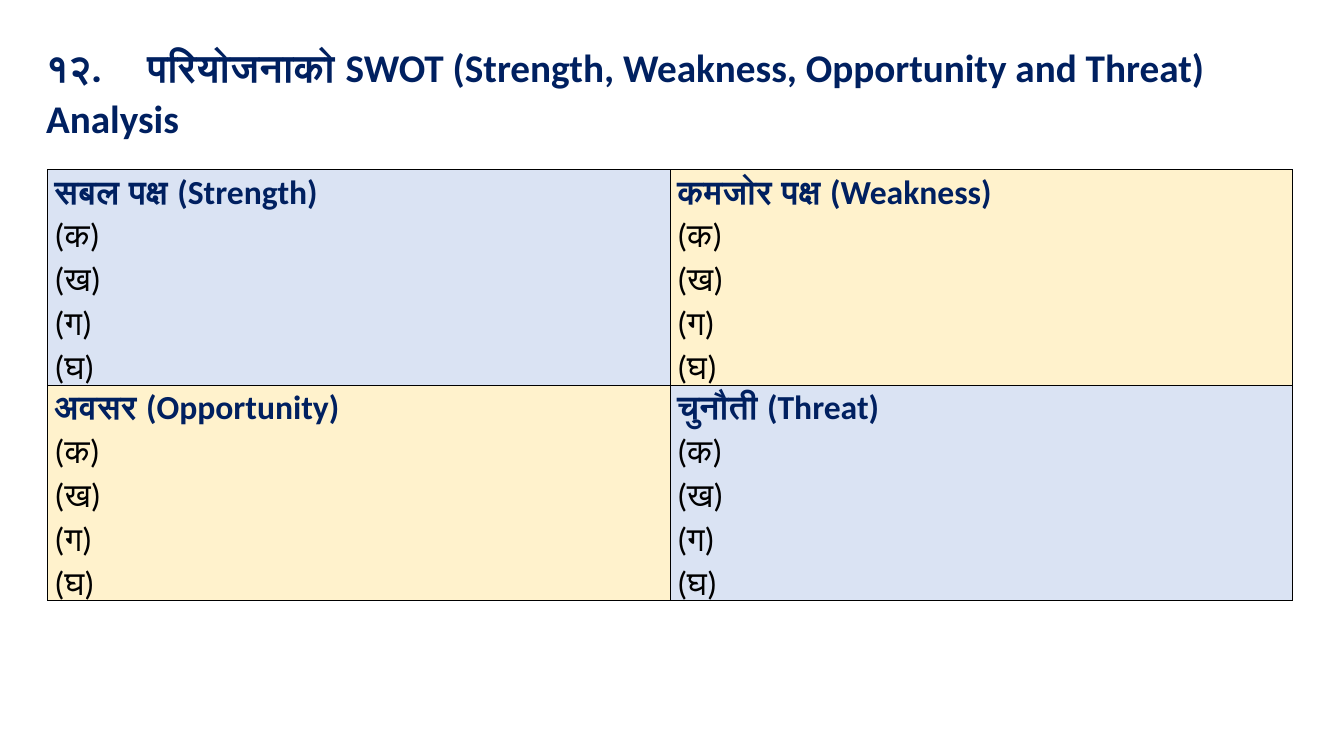
from dataclasses import dataclass

from lxml import etree
from pptx import Presentation
from pptx.dml.color import RGBColor
from pptx.oxml.ns import qn
from pptx.util import Inches, Pt


@dataclass(frozen=True)
class Theme:
    navy: str = "002060"
    black: str = "000000"
    blue: str = "DAE3F3"
    cream: str = "FFF2CC"
    latin_font: str = "Calibri"
    nepali_font: str = "Roboto"
    title_size: int = 28
    body_size: int = 24
    line_spacing: float = 1.07
    border_width: float = 0.5


THEME = Theme()
TITLE = (
    ("१२.\tपरियोजनाको ", THEME.nepali_font),
    ("SWOT (Strength, Weakness, Opportunity and Threat) \tAnalysis", THEME.latin_font),
)
QUADRANTS = (
    ("सबल पक्ष (Strength)", "कमजोर पक्ष (Weakness)"),
    ("अवसर (Opportunity)", "चुनौती (Threat)"),
)
ITEMS = ("(क)", "(ख)", "(ग)", "(घ)")


def add_span(para, text, font, size, color, bold):
    para.line_spacing = THEME.line_spacing
    span = para.add_run()
    span.text = text
    for name, value in {"name": font, "size": Pt(size), "bold": bold}.items():
        setattr(span.font, name, value)
    span.font.color.rgb = RGBColor.from_string(color)


def add_title(page, left, top, width, height):
    frame = page.shapes.add_textbox(
        Inches(left), Inches(top), Inches(width), Inches(height)).text_frame
    frame.word_wrap = True
    for text, font in TITLE:
        add_span(frame.paragraphs[0], text, font, THEME.title_size, THEME.navy, True)


def add_borders(cell):
    properties = cell._tc.get_or_add_tcPr()
    # Border lines must come before the cell fill
    for index, side in enumerate(("lnL", "lnR", "lnT", "lnB")):
        line = etree.Element(qn(f"a:{side}"), w=str(Pt(THEME.border_width)))
        fill = etree.SubElement(line, qn("a:solidFill"))
        etree.SubElement(fill, qn("a:srgbClr"), val=THEME.black)
        properties.insert(index, line)


def fill_quadrant(cell, heading, color):
    margins = {"margin_left": 0.07, "margin_right": 0.07,
               "margin_top": 0, "margin_bottom": 0}
    for name, value in margins.items():
        setattr(cell, name, Inches(value))
    cell.fill.solid()
    cell.fill.fore_color.rgb = RGBColor.from_string(color)
    add_borders(cell)

    # Heading, then the lettered items
    frame = cell.text_frame
    add_span(frame.paragraphs[0], heading, THEME.latin_font,
             THEME.body_size, THEME.navy, True)
    for item in ITEMS:
        add_span(frame.add_paragraph(), item, THEME.latin_font,
                 THEME.body_size, THEME.black, False)


def add_swot_table(page, left, top, width, height):
    table = page.shapes.add_table(
        len(QUADRANTS), len(QUADRANTS[0]),
        Inches(left), Inches(top), Inches(width), Inches(height)).table
    table.first_row = table.horz_banding = False
    # Fills alternate like a chequerboard
    for row, headings in enumerate(QUADRANTS):
        for column, heading in enumerate(headings):
            color = (THEME.blue, THEME.cream)[(row + column) % 2]
            fill_quadrant(table.cell(row, column), heading, color)


def main():
    deck = Presentation()
    deck.slide_width, deck.slide_height = Inches(13.33), Inches(7.5)
    page = deck.slides.add_slide(deck.slide_layouts[6])
    add_title(page, 0.36, 0.35, 12.55, 1.09)
    add_swot_table(page, 0.47, 1.68, 12.35, 4.14)
    deck.save("out.pptx")


if __name__ == "__main__":
    main()
